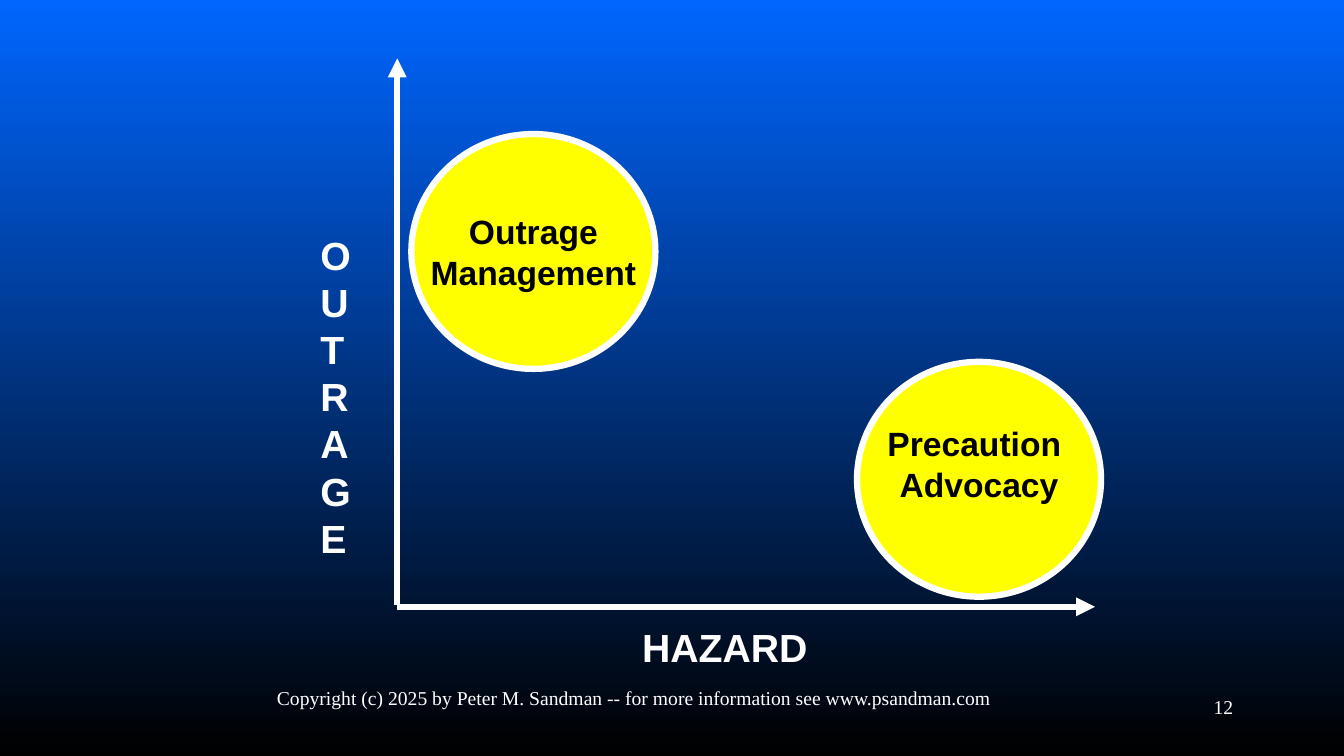
import pptx
import pptx.util
import pptx.dml.color
import pptx.enum.shapes
import pptx.enum.text
import pptx.oxml
import pptx.oxml.ns

Inches, Pt = pptx.util.Inches, pptx.util.Pt
RGBColor = pptx.dml.color.RGBColor
ALIGN = pptx.enum.text.PP_ALIGN
ANCHOR = pptx.enum.text.MSO_ANCHOR

BLUE = RGBColor(0x00, 0x66, 0xFF)
BLACK = RGBColor(0x00, 0x00, 0x00)
WHITE = RGBColor(0xFF, 0xFF, 0xFF)
YELLOW = RGBColor(0xFF, 0xFF, 0x00)
LINE_WIDTH = Pt(4.5)


def write_lines(tf, lines, font, size, color, bold, align, spacing=None):
    """Write each line as a paragraph; spacing is the line pitch in points."""
    for i, line in enumerate(lines):
        p = tf.paragraphs[0] if i == 0 else tf.add_paragraph()
        p.alignment = align
        if spacing:
            p.line_spacing = Pt(spacing)
        r = p.add_run()
        r.text = line
        r.font.name = font
        r.font.size = Pt(size)
        r.font.bold = bold
        r.font.color.rgb = color


prs = pptx.Presentation()
prs.slide_width = Inches(13.33)
prs.slide_height = Inches(7.5)
s = prs.slides.add_slide(prs.slide_layouts[6])

# Background: blue at the top, black at the bottom
fill = s.background.fill
fill.gradient()
fill.gradient_angle = 270
for stop, position, color in zip(fill.gradient_stops, (0, 1), (BLUE, BLACK)):
    stop.position = position
    stop.color.rgb = color

# Outrage axis, then hazard axis
for x1, y1, x2, y2 in [(3.94, 6, 3.94, 0.58), (3.94, 6.02, 10.86, 6.02)]:
    axis = s.shapes.add_connector(
        pptx.enum.shapes.MSO_CONNECTOR.STRAIGHT,
        Inches(x1), Inches(y1), Inches(x2), Inches(y2))
    axis.line.color.rgb = WHITE
    axis.line.width = LINE_WIDTH
    head = pptx.oxml.parse_xml(
        '<a:tailEnd %s type="triangle"/>' % pptx.oxml.ns.nsdecls("a"))
    axis.line._get_or_add_ln().append(head)
    axis._element.spPr.append(pptx.oxml.parse_xml(
        "<a:effectLst %s/>" % pptx.oxml.ns.nsdecls("a")))

# Circles; a deeper bottom margin lifts the text
circles = [
    (4.08, 1.33, ["Outrage", "Management"], 0.05),
    (8.5, 3.59, ["Precaution ", "Advocacy"], 0.36),
]
for left, top, lines, bottom_margin in circles:
    sp = s.shapes.add_shape(
        pptx.enum.shapes.MSO_SHAPE.OVAL,
        Inches(left), Inches(top), Inches(2.42), Inches(2.33))
    sp.shadow.inherit = False
    sp.fill.solid()
    sp.fill.fore_color.rgb = YELLOW
    sp.line.color.rgb = WHITE
    sp.line.width = LINE_WIDTH
    tf = sp.text_frame
    tf.word_wrap = False
    tf.vertical_anchor = ANCHOR.MIDDLE
    tf.margin_bottom = Inches(bottom_margin)
    write_lines(tf, lines, "Arial", 24, BLACK, True, ALIGN.CENTER, 29)

# Axis titles (the narrow box stacks the letters) and footer
labels = [
    ("HAZARD", 6.27, 6.13, 1.85, 0.57, False, "Arial", 28, True, ALIGN.LEFT, 33.7),
    ("OUTRAGE", 3.08, 2.24, 0.52, 3.75, True, "Arial", 28, True, ALIGN.LEFT, 33.7),
    ("12", 9.55, 6.84, 2.78, 0.5, True, "Times New Roman", 14, False,
     ALIGN.RIGHT, None),
    ("Copyright (c) 2025 by Peter M. Sandman -- for more information see "
     "www.psandman.com", 2.25, 6.76, 8.08, 0.5, True, "Times New Roman", 14,
     False, ALIGN.CENTER, None),
]
for text, left, top, width, height, wrap, font, size, bold, align, spacing in labels:
    box = s.shapes.add_textbox(
        Inches(left), Inches(top), Inches(width), Inches(height))
    box.text_frame.word_wrap = wrap
    write_lines(box.text_frame, [text], font, size, WHITE, bold, align, spacing)

prs.save("out.pptx")
